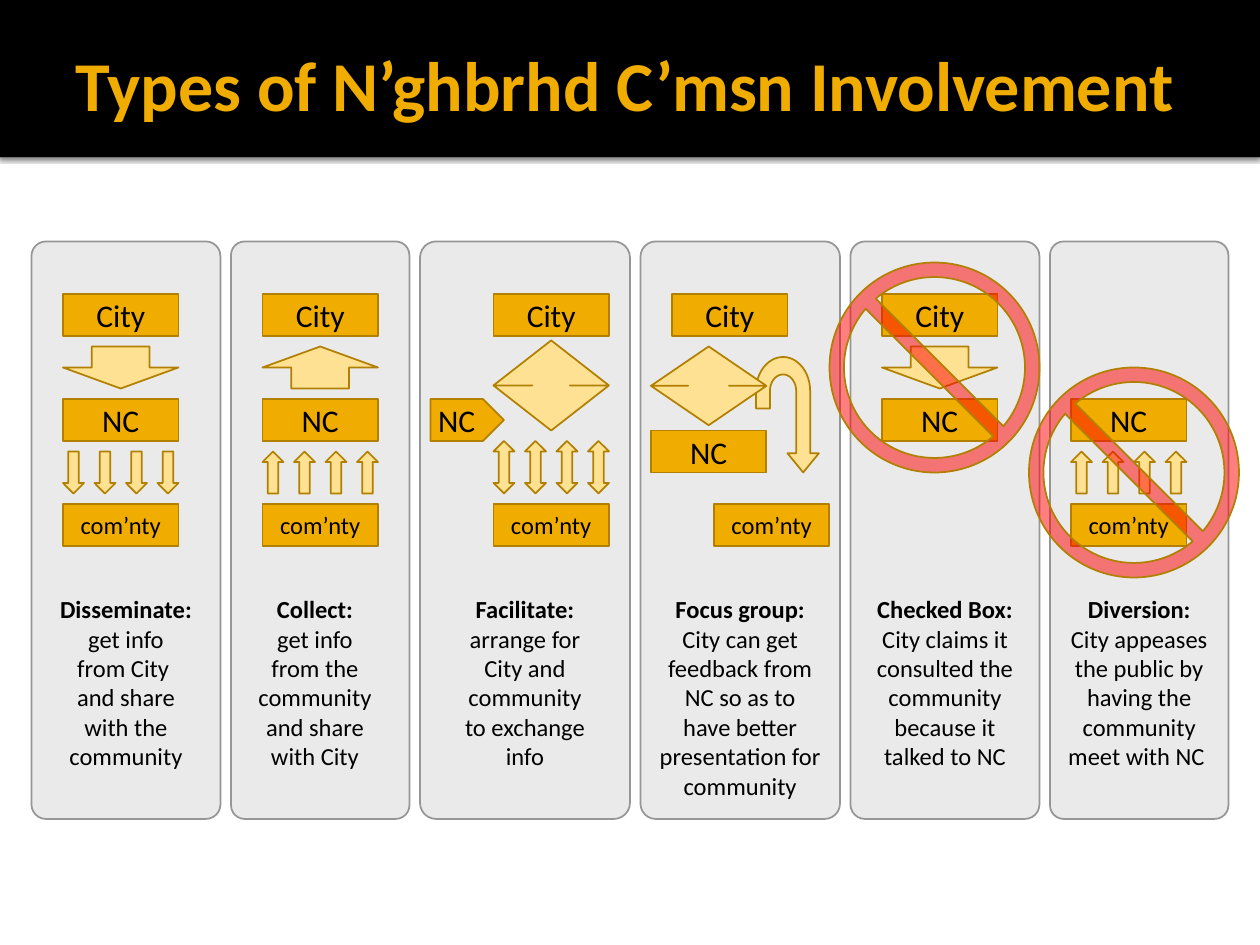
from math import cos, pi, sin

from lxml import etree
from pptx import Presentation
from pptx.dml.color import RGBColor
from pptx.enum.shapes import MSO_SHAPE
from pptx.enum.text import MSO_ANCHOR, PP_ALIGN
from pptx.oxml.ns import qn
from pptx.util import Pt

RECT, PANEL = MSO_SHAPE.RECTANGLE, MSO_SHAPE.ROUNDED_RECTANGLE
DOWN, UP, BOTH = MSO_SHAPE.DOWN_ARROW, MSO_SHAPE.UP_ARROW, MSO_SHAPE.UP_DOWN_ARROW
TAG, BAN = MSO_SHAPE.RIGHT_ARROW, MSO_SHAPE.NO_SYMBOL
CENTER, LEFT, MIDDLE = PP_ALIGN.CENTER, PP_ALIGN.LEFT, MSO_ANCHOR.MIDDLE

GOLD, PALE, EDGE = "F0AD00", "FFE193", "B28000"
BLACK, WHITE, RED = "000000", "FFFFFF", "FF0000"
GREY, RIM = "EAEAEA", "969696"
FONT = "Calibri"
BOX_W, BOX_H = 66, 24
TOP, HIGH, GAP = 138, 330, 6


def color(code):
    """Turn a hex string into a colour."""
    return RGBColor.from_string(code)


def paint(shape, fill, line=EDGE):
    """Set fill and outline, and drop the theme shadow."""
    shape.shadow.inherit = False
    shape.fill.solid()
    shape.fill.fore_color.rgb = color(fill)
    if line:
        shape.line.color.rgb = color(line)
        shape.line.width = Pt(1)
    else:
        shape.line.fill.background()
    return shape


def draw(slide, kind, x, y, w, h, fill, line=EDGE, adjust=()):
    """Add one preset shape."""
    shape = slide.shapes.add_shape(kind, Pt(x), Pt(y), Pt(w), Pt(h))
    for i, value in enumerate(adjust):
        shape.adjustments[i] = value
    return paint(shape, fill, line)


def write(frame, lines, size, code=BLACK, bold=False, align=CENTER, side=7.2):
    """Fill a text frame; the first line may be bold."""
    frame.word_wrap = True
    frame.margin_left = frame.margin_right = Pt(side)
    frame.margin_top = frame.margin_bottom = Pt(3.6)
    for i, line in enumerate(lines):
        para = frame.add_paragraph() if i else frame.paragraphs[0]
        para.text = line
        para.alignment = align
        para.font.name = FONT
        para.font.size = Pt(size)
        para.font.bold = bold and i == 0
        para.font.color.rgb = color(code)


def label(slide, text, x, y, size=18):
    """Add a gold box with a name."""
    box = draw(slide, RECT, x, y, BOX_W, BOX_H, GOLD)
    box.text_frame.vertical_anchor = MIDDLE
    write(box.text_frame, [text], size)


def row(slide, kind, x, y, h=BOX_H):
    """Add four small arrows across a box width."""
    for i in range(4):
        draw(slide, kind, x + i * 18, y, 12, h, PALE)


def ban(slide, x, y):
    """Add a see-through prohibition sign."""
    sign = draw(slide, BAN, x, y, 120, 120, RED, adjust=[0.069])
    fill = sign._element.spPr.find(qn("a:solidFill"))
    etree.SubElement(fill[0], qn("a:alpha"), val="50000")


def hook(slide, x, y):
    """Add an arrow that bends over and points down."""
    def arc(rx, ry, step):
        turns = [pi * i / 24 for i in range(25)][::step]
        return [(15.5 - rx * cos(t), 19.5 - ry * sin(t)) for t in turns]

    head = [(31, 55), (36, 55), (27, 66), (18, 55), (23, 55)]
    dots = arc(15.5, 19.5, 1) + head + arc(7.5, 9.5, -1) + [(8, 29.5), (0, 29.5)]
    dots = [(Pt(x + a), Pt(y + b)) for a, b in dots]
    path = slide.shapes.build_freeform(*dots[0])
    path.add_line_segments(dots[1:], close=True)
    paint(path.convert_to_shape(), PALE)


def upper(slide, x, y, kind):
    """Link City and NC with a broad arrow."""
    label(slide, "City", x, y + 30)
    draw(slide, kind, x, y + 60, BOX_W, BOX_H, PALE)
    label(slide, "NC", x, y + 90)


def lower(slide, x, y, kind):
    """Link NC and community with small arrows."""
    row(slide, kind, x, y + 120)
    label(slide, "com’nty", x, y + 150, 14)


def share(slide, x, y):
    """Draw information going down."""
    upper(slide, x + 18, y, DOWN)
    lower(slide, x + 18, y, DOWN)


def collect(slide, x, y):
    """Draw information going up."""
    upper(slide, x + 18, y, UP)
    lower(slide, x + 18, y, UP)


def assist(slide, x, y):
    """Draw a two-way exchange with NC beside it."""
    left = x + 42
    label(slide, "City", left, y + 30)
    draw(slide, BOTH, left, y + 56.5, BOX_W, 51.5, PALE, adjust=[0.568, 0.324])
    tag = draw(slide, TAG, x + 6, y + 90, 42, BOX_H, GOLD, adjust=[1, 0.5])
    tag.text_frame.vertical_anchor = MIDDLE
    write(tag.text_frame, ["NC"], 18, side=0)
    row(slide, BOTH, left, y + 114, 30)
    label(slide, "com’nty", left, y + 150, 14)


def focus(slide, x, y):
    """Draw City and NC in exchange, then on to the community."""
    label(slide, "City", x + 18, y + 30)
    label(slide, "NC", x + 6, y + 108)
    label(slide, "com’nty", x + 42, y + 150, 14)
    hook(slide, x + 66, y + 66)
    draw(slide, BOTH, x + 6, y + 60, BOX_W, 45, PALE, adjust=[0.531, 0.353])


def claim(slide, x, y):
    """Draw City to NC, struck out."""
    upper(slide, x + 18, y, DOWN)
    ban(slide, x - 12, y + 12)


def divert(slide, x, y):
    """Draw community to NC, struck out."""
    label(slide, "NC", x + 12, y + 90)
    lower(slide, x + 12, y, UP)
    ban(slide, x - 12, y + 72)


def header(slide, w, h):
    """Draw the title band with its shadow."""
    strip = draw(slide, RECT, 0, h - 4, w, 4, WHITE, None)
    effect = strip._element.spPr.find(qn("a:effectLst"))
    cast = etree.SubElement(effect, qn("a:outerShdw"), blurRad=str(Pt(2.5)),
                            dist=str(Pt(0.8)), dir="5400000", rotWithShape="0")
    tone = etree.SubElement(cast, qn("a:srgbClr"), val=BLACK)
    etree.SubElement(tone, qn("a:alpha"), val="60000")
    draw(slide, RECT, 0, 0, w, h, BLACK, None)
    box = slide.shapes.add_textbox(Pt(36), Pt(12), Pt(w - 36), Pt(72))
    box.text_frame.vertical_anchor = MIDDLE
    write(box.text_frame, ["Types of N’ghbrhd C’msn Involvement"], 40, GOLD, True, LEFT)
    box.text_frame.margin_right = Pt(3.6)


def column(slide, x, y, w, h, sketch, inset, wide, lines):
    """Draw one panel with its diagram and caption."""
    draw(slide, PANEL, x, y, w, h, GREY, RIM, [0.077])
    note = slide.shapes.add_textbox(Pt(x + inset), Pt(y + 198), Pt(wide), Pt(108))
    write(note.text_frame, lines, 14, bold=True, side=0)
    sketch(slide, x, y)


COLUMNS = [
    (108, share, 12, 84, ["Disseminate:", "get info\nfrom City \nand share\nwith the community"]),
    (102, collect, 6, 84, ["Collect:", "get info", "from the community",
                           "and share with City"]),
    (120, assist, 18, 84, ["Facilitate:", "arrange for", "City and", "community",
                           "to exchange", "info"]),
    (114, focus, 6, 102, ["Focus group:", "City can get feedback from NC so as to",
                          "have better", "presentation for community"]),
    (108, claim, 9, 90, ["Checked Box:", "City claims it consulted the community",
                         "because it talked to NC"]),
    (102, divert, 6, 90, ["Diversion:", "City appeases the public by having the community",
                          "meet with NC "]),
]


def main():
    """Build and save the slide."""
    deck = Presentation()
    deck.slide_width, deck.slide_height = Pt(720), Pt(540)
    slide = deck.slides.add_slide(deck.slide_layouts[6])
    header(slide, 720, 90)
    x = 18
    for w, *rest in COLUMNS:
        column(slide, x, TOP, w, HIGH, *rest)
        x += w + GAP
    deck.save("out.pptx")


if __name__ == "__main__":
    main()
